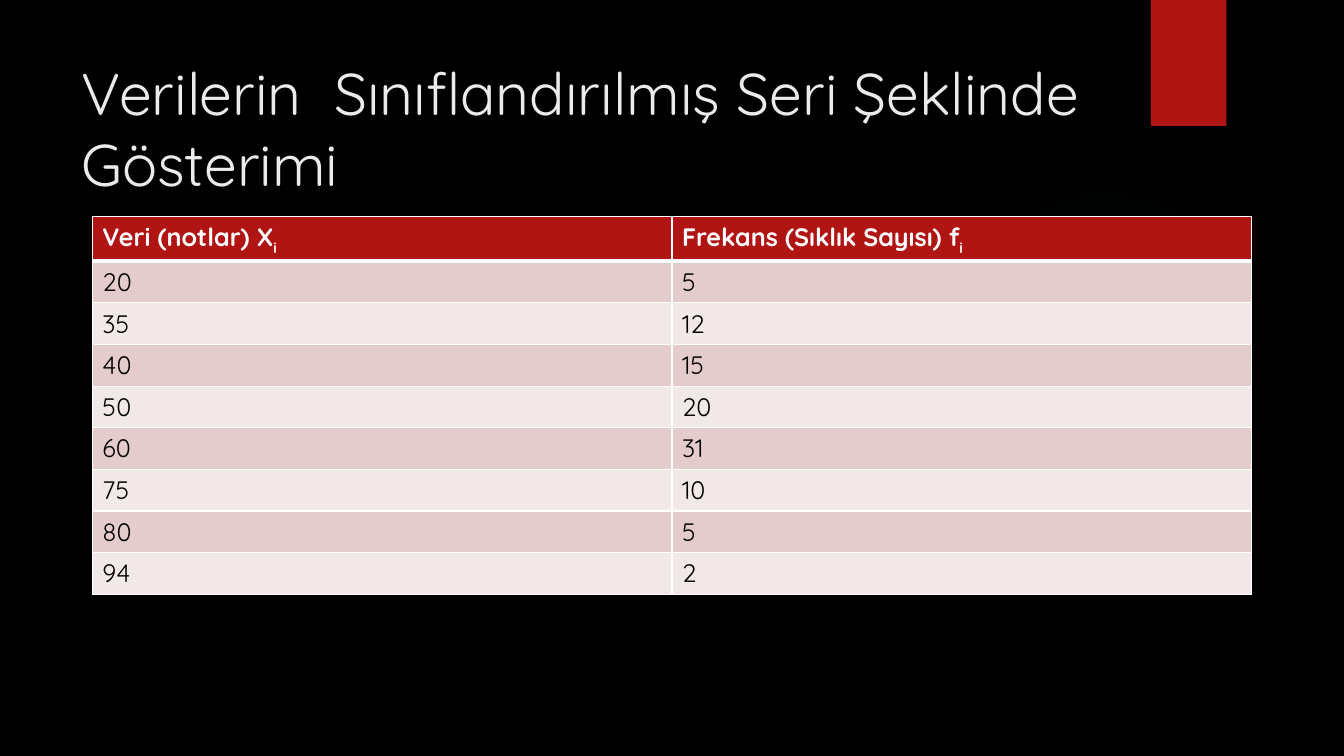
import dataclasses

import lxml.etree
import pptx
import pptx.dml.color
import pptx.enum.shapes
import pptx.enum.text
import pptx.oxml
import pptx.oxml.ns
import pptx.util


@dataclasses.dataclass(frozen=True)
class Theme:
    """Colours, type sizes and line widths of the slide."""
    background: str = "000000"
    accent: str = "B01513"
    glow: str = "50B9C1"
    heading: str = "EBEBEB"
    header_text: str = "FFFFFF"
    body_text: str = "000000"
    bands: tuple = ("E4CCCC", "F2E8E7")
    border: str = "FFFFFF"
    font: str = "Quicksand"
    heading_size: int = 42
    table_size: int = 18
    thin: int = 1
    thick: int = 3


class SlideBuilder:
    """Draws elements on one slide, placed on a grid of 160 columns by 90 rows."""
    COLUMNS, ROWS = 160, 90

    def __init__(self, deck, theme):
        """Add a blank slide with the theme background."""
        self.theme = theme
        self.column = deck.slide_width / self.COLUMNS
        self.row = deck.slide_height / self.ROWS
        self.slide = deck.slides.add_slide(deck.slide_layouts[6])
        self.paint(self.slide.background.fill, theme.background)

    def place(self, left, top, width, height):
        """Turn grid units into slide lengths."""
        return (round(left * self.column), round(top * self.row),
                round(width * self.column), round(height * self.row))

    def paint(self, fill, colour):
        """Fill with one solid colour."""
        fill.solid()
        fill.fore_color.rgb = pptx.dml.color.RGBColor.from_string(colour)

    def style(self, run, size, colour, bold=False):
        """Set the font of a run."""
        run.font.name = self.theme.font
        run.font.size = pptx.util.Pt(size)
        run.font.bold = bold
        run.font.color.rgb = pptx.dml.color.RGBColor.from_string(colour)

    def shape(self, preset, *area):
        """Add a preset shape with no line or shadow."""
        shape = self.slide.shapes.add_shape(preset, *self.place(*area))
        shape.shadow.inherit = False
        shape.line.fill.background()
        return shape

    def ribbon(self, *area):
        """Add a solid accent rectangle."""
        ribbon = self.shape(pptx.enum.shapes.MSO_SHAPE.RECTANGLE, *area)
        self.paint(ribbon.fill, self.theme.accent)

    def glow(self, stops, *area):
        """Add a circle that fades outwards through (position, opacity) percentages."""
        circle = self.shape(pptx.enum.shapes.MSO_SHAPE.OVAL, *area)
        fades = "".join(
            f'<a:gs pos="{position * 1000}"><a:srgbClr val="{self.theme.glow}">'
            f'<a:alpha val="{opacity * 1000}"/></a:srgbClr></a:gs>'
            for position, opacity in stops)
        gradient = pptx.oxml.parse_xml(
            f'<a:gradFill {pptx.oxml.ns.nsdecls("a")}><a:gsLst>{fades}</a:gsLst>'
            '<a:path path="circle"><a:fillToRect l="50000" t="50000" r="50000" b="50000"/>'
            '</a:path></a:gradFill>')
        circle._element.spPr.find(pptx.oxml.ns.qn("a:prstGeom")).addnext(gradient)

    def heading(self, text, *area):
        """Add the slide heading."""
        frame = self.slide.shapes.add_textbox(*self.place(*area)).text_frame
        frame.word_wrap = True
        frame.vertical_anchor = pptx.enum.text.MSO_ANCHOR.MIDDLE
        frame.text = text
        self.style(frame.paragraphs[0].runs[0], self.theme.heading_size, self.theme.heading)

    def borders(self, cell, top, bottom):
        """Draw the four borders of a cell."""
        properties = cell._tc.get_or_add_tcPr()
        thin = self.theme.thin
        for side, points in (("L", thin), ("R", thin), ("T", top), ("B", bottom)):
            line = lxml.etree.SubElement(properties, pptx.oxml.ns.qn(f"a:ln{side}"),
                                         w=str(pptx.util.Pt(points)))
            solid = lxml.etree.SubElement(line, pptx.oxml.ns.qn("a:solidFill"))
            lxml.etree.SubElement(solid, pptx.oxml.ns.qn("a:srgbClr"), val=self.theme.border)

    def table(self, headers, records, header_height, record_height, *area):
        """Add a banded table whose headers are (text, subscript) pairs."""
        theme = self.theme
        rows = [*headers_and_records(headers, records)]
        table = self.slide.shapes.add_table(
            len(rows), len(headers), *self.place(*area)).table
        for index, row in enumerate(rows):
            is_header = index == 0
            height = header_height if is_header else record_height
            table.rows[index].height = round(height * self.row)
            colour = theme.header_text if is_header else theme.body_text
            for cell, (text, subscript) in zip(table.rows[index].cells, row):
                self.borders(cell, theme.thick if index == 1 else theme.thin,
                             theme.thick if is_header else theme.thin)
                self.paint(cell.fill, theme.accent if is_header else theme.bands[(index - 1) % 2])
                cell.text_frame.text = text
                paragraph = cell.text_frame.paragraphs[0]
                if subscript:
                    lowered = paragraph.add_run()
                    lowered.text = subscript
                    lowered._r.get_or_add_rPr().set("baseline", "-25000")
                for run in paragraph.runs:
                    self.style(run, theme.table_size, colour, is_header)


def headers_and_records(headers, records):
    """Yield every table row as (text, subscript) pairs."""
    yield headers
    for record in records:
        yield [(str(value), "") for value in record]


def main():
    """Build and save the slide."""
    deck = pptx.Presentation()
    deck.slide_width = pptx.util.Inches(13.33)
    deck.slide_height = pptx.util.Inches(7.5)
    page = SlideBuilder(deck, Theme())
    page.glow([(0, 7), (36, 6), (69, 0)], 113, 22, 37, 37)
    page.ribbon(137, 0, 9, 15)
    page.heading("Verilerin  Sınıflandırılmış Seri Şeklinde Gösterimi", 8.5, 6, 123.5, 18.4)
    headers = [("Veri (notlar) X", "i"), ("Frekans (Sıklık Sayısı) f", "i")]
    grade_counts = [(20, 5), (35, 12), (40, 15), (50, 20),
                    (60, 31), (75, 10), (80, 5), (94, 2)]
    page.table(headers, grade_counts, 3.12, 4.96, 11, 25.8, 138, 43.7)
    deck.save("out.pptx")


if __name__ == "__main__":
    main()
